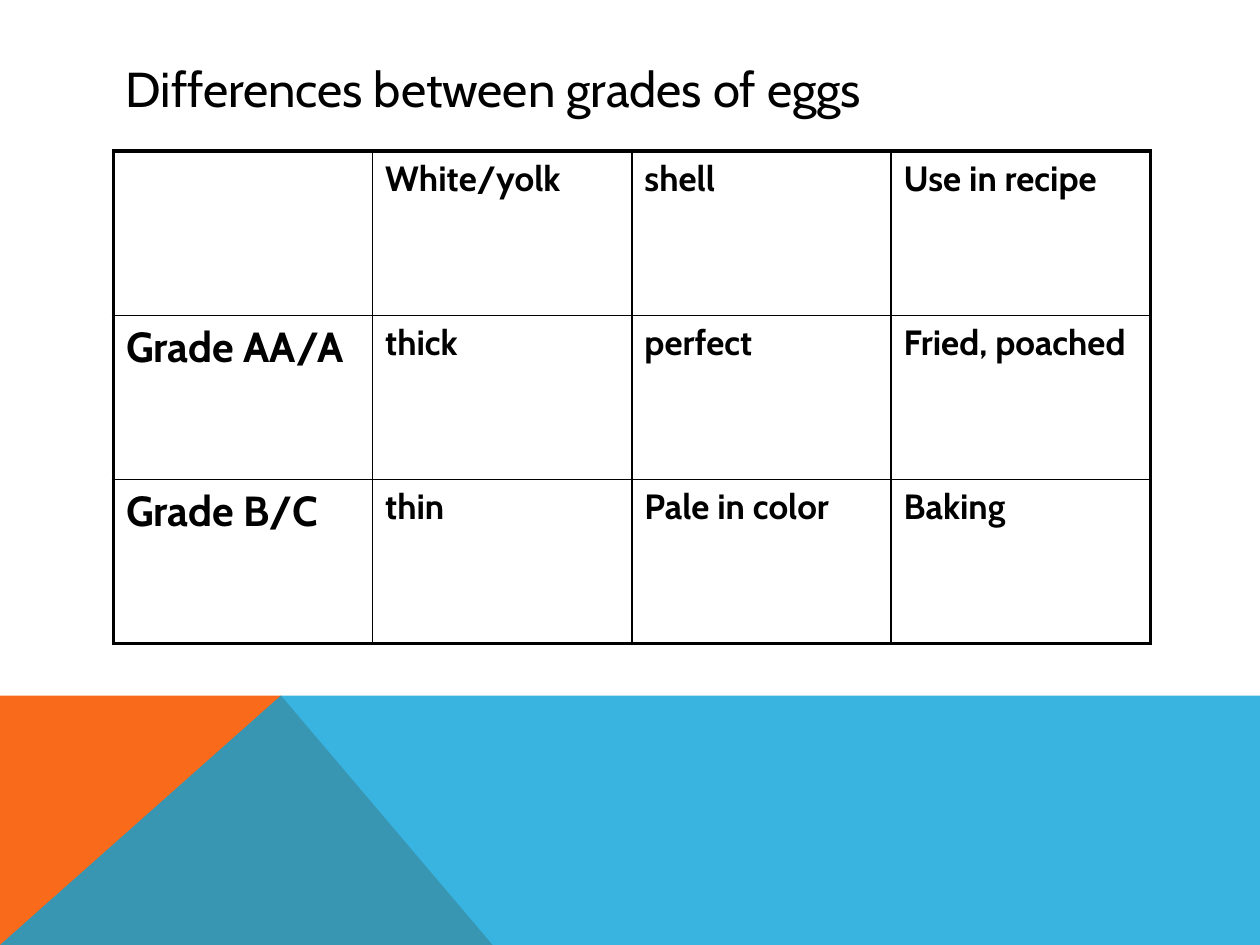
from dataclasses import dataclass
from typing import Optional

import pptx
import pptx.dml.color
import pptx.enum.text
import pptx.oxml.ns
import pptx.oxml.xmlchemy
import pptx.util
from lxml import etree

Inches = pptx.util.Inches
Pt = pptx.util.Pt
RGBColor = pptx.dml.color.RGBColor
qn = pptx.oxml.ns.qn

BLACK = RGBColor(0x00, 0x00, 0x00)
ORANGE = RGBColor(0xF9, 0x6A, 0x1B)
BLUE = RGBColor(0x08, 0xA1, 0xD9)
FONT = "Cabin"

LEFT, WIDTH = 0.9, 8.23
TABLE_TOP, TABLE_HEIGHT = 1.2, 3.91
THIN, THICK = 1, 2.25
BAND_TOP, PEAK_X = 5.52, 2.23


@dataclass
class Band:
    points: list[tuple[float, float]]
    color: RGBColor
    opacity: Optional[int] = None


BANDS = [
    Band([(0, 7.5), (0, BAND_TOP), (PEAK_X, BAND_TOP), (3.91, 7.5)], ORANGE),
    Band([(0, 7.5), (PEAK_X, BAND_TOP), (10, BAND_TOP), (10, 7.5)], BLUE, 80),
]

GRADES = [
    ["", "White/yolk", "shell", "Use in recipe"],
    ["Grade AA/A", "thick", "perfect", "Fried, poached"],
    ["Grade B/C", "thin", "Pale in color", "Baking"],
]


def add_band(s, band: Band) -> None:
    points = [(Inches(x), Inches(y)) for x, y in band.points]
    builder = s.shapes.build_freeform(*points[0], scale=1.0)
    builder.add_line_segments(points[1:], close=True)
    sp = builder.convert_to_shape()
    sp.shadow.inherit = False
    sp.line.fill.background()
    sp.fill.solid()
    sp.fill.fore_color.rgb = band.color
    if band.opacity is not None:
        color = sp._element.spPr.find(qn("a:solidFill")).find(qn("a:srgbClr"))
        etree.SubElement(color, qn("a:alpha"), val=str(band.opacity * 1000))


def add_run(p, text: str, size: int, bold: bool = False) -> None:
    r = p.add_run()
    r.text = text
    r.font.name = FONT
    r.font.size = Pt(size)
    r.font.bold = bold
    r.font.color.rgb = BLACK


def add_title(s, text: str) -> None:
    sp = s.shapes.add_textbox(Inches(LEFT), Inches(0.4), Inches(WIDTH), Inches(0.6))
    tf = sp.text_frame
    tf.word_wrap = True
    tf.vertical_anchor = pptx.enum.text.MSO_ANCHOR.MIDDLE
    add_run(tf.paragraphs[0], text, 28)


def set_borders(cell, widths: dict[str, float]) -> None:
    props = cell._tc.get_or_add_tcPr()
    for i, (side, width) in enumerate(widths.items()):
        line = etree.Element(qn(f"a:ln{side}"), w=str(Pt(width)))
        fill = etree.SubElement(line, qn("a:solidFill"))
        etree.SubElement(fill, qn("a:srgbClr"), val=str(BLACK))
        props.insert(i, line)


def add_grades_table(s, rows: list[list[str]]) -> None:
    n_rows, n_cols = len(rows), len(rows[0])
    table = s.shapes.add_table(
        n_rows, n_cols, Inches(LEFT), Inches(TABLE_TOP), Inches(WIDTH), Inches(TABLE_HEIGHT)
    ).table
    table.first_row = False
    table.horz_banding = False
    for i, row in enumerate(rows):
        for j, text in enumerate(row):
            cell = table.cell(i, j)
            cell.fill.background()
            set_borders(cell, {
                "L": THICK if j == 0 else THIN,
                "R": THICK if j == n_cols - 1 else THIN,
                "T": THICK if i == 0 else THIN,
                "B": THICK if i == n_rows - 1 else THIN,
            })
            if text:
                p = cell.text_frame.paragraphs[0]
                p.space_before = Pt(8)
                add_run(p, text, 24 if j == 0 else 20, bold=True)


def main() -> None:
    prs = pptx.Presentation()
    prs.slide_width = Inches(10)
    prs.slide_height = Inches(7.5)
    s = prs.slides.add_slide(prs.slide_layouts[6])
    for band in BANDS:
        add_band(s, band)
    add_title(s, "Differences between grades of eggs")
    add_grades_table(s, GRADES)
    prs.save("out.pptx")


if __name__ == "__main__":
    main()
